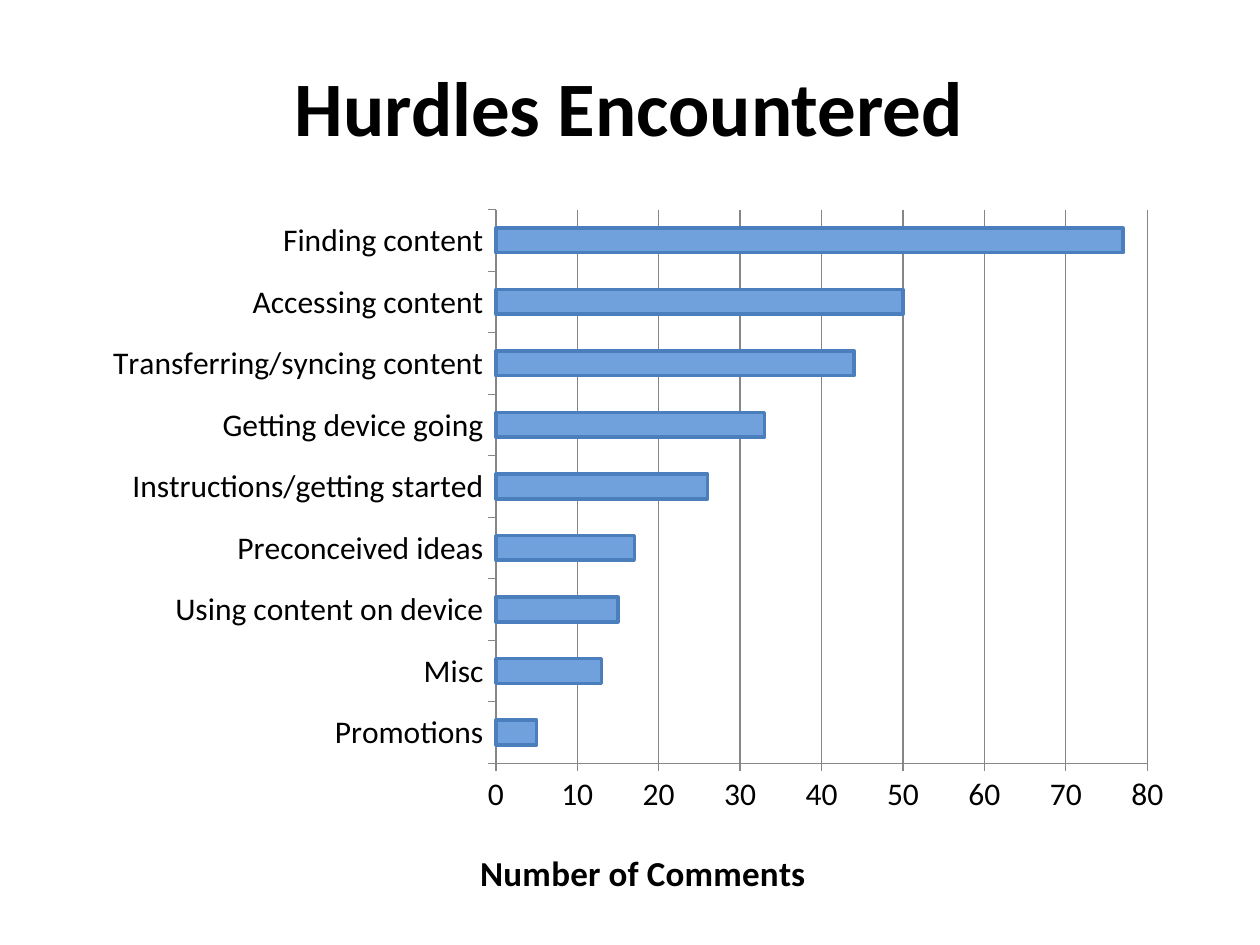
from lxml import etree
from pptx import Presentation
from pptx.chart.data import CategoryChartData
from pptx.dml.color import RGBColor
from pptx.enum.chart import XL_CHART_TYPE as CT, XL_TICK_MARK as Tick
from pptx.enum.text import MSO_ANCHOR as Anchor, PP_ALIGN as Align
from pptx.oxml.ns import qn
from pptx.util import Inches, Pt


def rgb(value):
    return RGBColor.from_string(value)


def set_layout(parent, after, **values):
    """Give a chart part a manual place, as fractions of the chart."""
    for old in parent.findall(qn("c:layout")):
        parent.remove(old)
    layout = etree.Element(qn("c:layout"))
    manual = etree.SubElement(layout, qn("c:manualLayout"))
    for tag, value in values.items():
        etree.SubElement(manual, qn(f"c:{tag}")).set("val", str(value))
    if after is None:
        parent.insert(0, layout)
    else:
        after.addnext(layout)


class SlideBuilder:
    font = "Calibri"
    text, bar, border, grid = "000000", "71A1DC", "4B7EBC", "868686"

    def __init__(self, prs):
        self.s = prs.slides.add_slide(prs.slide_layouts[5])

    def style(self, font, size, bold=False):
        font.name, font.size, font.bold = self.font, Pt(size), bold
        font.color.rgb = rgb(self.text)

    def line(self, line, color, width):
        line.color.rgb = rgb(color)
        line.width = Pt(width)

    def title(self, text, x, y, w, h):
        sp = self.s.shapes.title
        sp.left, sp.top, sp.width, sp.height = map(Inches, (x, y, w, h))
        tf = sp.text_frame
        tf.vertical_anchor = Anchor.MIDDLE
        p = tf.paragraphs[0]
        p.alignment = Align.CENTER
        r = p.add_run()
        r.text = text
        self.style(r.font, 44, True)

    def axis(self, axis):
        axis.major_tick_mark, axis.minor_tick_mark = Tick.OUTSIDE, Tick.NONE
        self.style(axis.tick_labels.font, 18)
        self.line(axis.format.line, self.grid, 0.75)

    def bar_chart(self, rows, axis_title, x, y, w, h):
        data = CategoryChartData()
        data.categories = [name for name, _ in rows]
        data.add_series("Series 1", [value for _, value in rows])
        chart = self.s.shapes.add_chart(
            CT.BAR_CLUSTERED, *map(Inches, (x, y, w, h)), data).chart
        chart.has_legend = chart.has_title = False
        self.style(chart.font, 14)

        # Bars
        plot = chart.plots[0]
        plot.gap_width, plot.vary_by_categories = 150, False
        fmt = plot.series[0].format
        fmt.fill.solid()
        fmt.fill.fore_color.rgb = rgb(self.bar)
        self.line(fmt.line, self.border, 2)

        # Axes and gridlines
        self.axis(chart.category_axis)
        chart.category_axis.has_major_gridlines = False
        values = chart.value_axis
        self.axis(values)
        values.minimum_scale, values.maximum_scale, values.major_unit = 0, 80, 10
        values.has_major_gridlines = True
        self.line(values.major_gridlines.format.line, self.grid, 0.75)

        # Axis title
        title = values.axis_title
        r = title.text_frame.paragraphs[0].add_run()
        r.text = axis_title
        self.style(r.font, 20, True)

        # Places of the plot and the axis title
        set_layout(plot._element.getparent(), None, layoutTarget="inner",
                   xMode="edge", yMode="edge", x=0.37, y=0.02, w=0.595, h=0.771)
        title_xml = title._element
        set_layout(title_xml, title_xml.find(qn("c:tx")),
                   xMode="edge", yMode="edge", x=0.35, y=0.9)


def main():
    prs = Presentation()
    prs.slide_width, prs.slide_height = Inches(10), Inches(7.5)
    slide = SlideBuilder(prs)
    slide.title("Hurdles Encountered", 1.75, 0.42, 6.49, 0.84)
    hurdles = [
        ("Promotions", 5),
        ("Misc", 13),
        ("Using content on device", 15),
        ("Preconceived ideas", 17),
        ("Instructions/getting started", 26),
        ("Getting device going", 33),
        ("Transferring/syncing content", 44),
        ("Accessing content", 50),
        ("Finding content", 77),
    ]
    slide.bar_chart(hurdles, "Number of Comments", 0.72, 1.55, 8.69, 5.7)
    prs.save("out.pptx")


if __name__ == "__main__":
    main()
